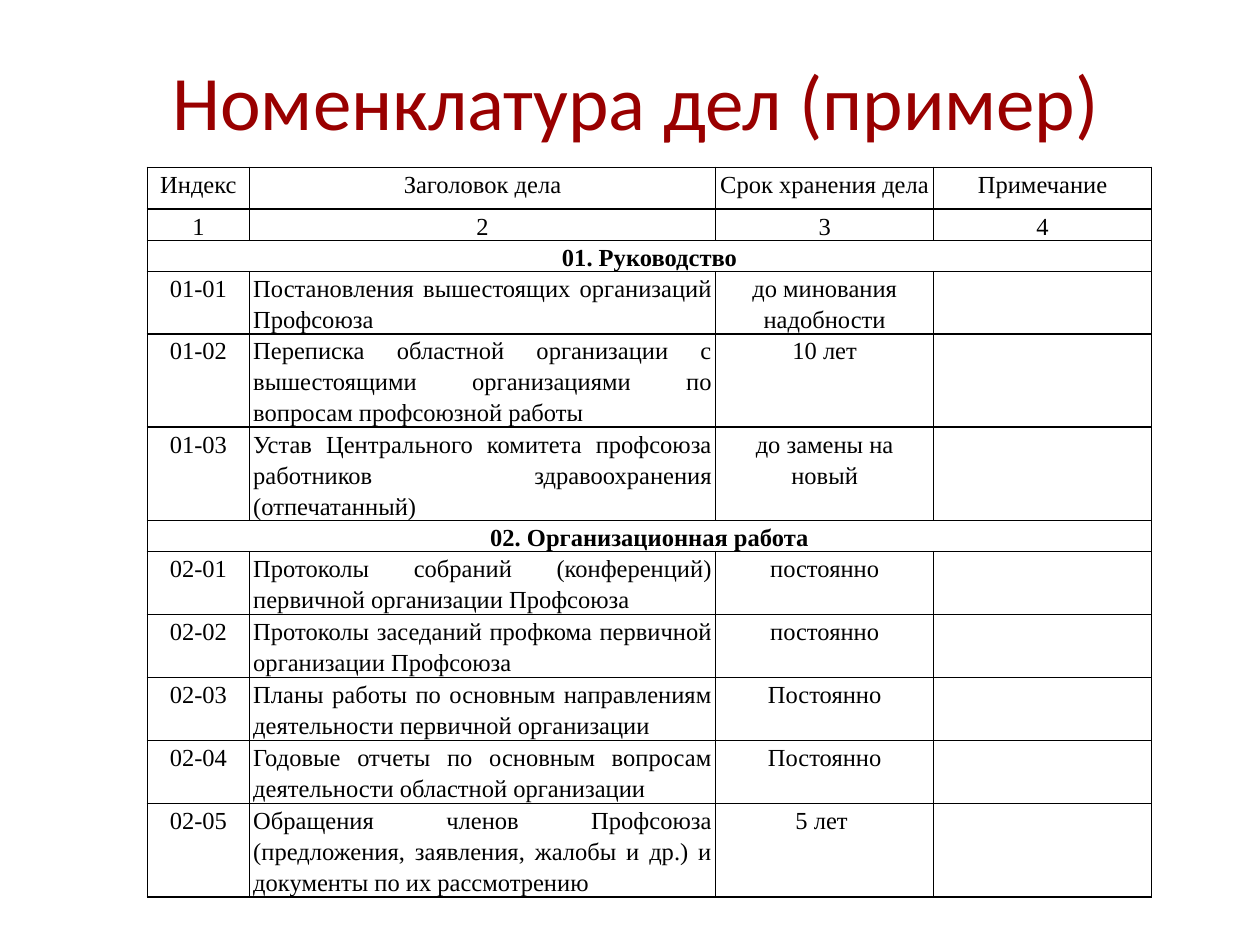
from lxml.etree import SubElement
from pptx import Presentation
from pptx.dml.color import RGBColor
from pptx.enum.text import MSO_ANCHOR, PP_ALIGN
from pptx.oxml.ns import qn
from pptx.util import Inches, Pt

TITLE = "Номенклатура дел (пример)"
COLUMN_WIDTHS = (0.081, 0.37, 0.173, 0.173)  # shares of the slide width
ROW_UNIT = 1 / 45  # share of the slide height

# Minimum height in row units, then the cell texts; one text is a section heading.
ROWS = [
    (2, "Индекс", "Заголовок дела", "Срок хранения дела", "Примечание"),
    (1, "1", "2", "3", "4"),
    (1, "01. Руководство"),
    (2, "01-01", "Постановления вышестоящих организаций Профсоюза",
     "до минования надобности", ""),
    (3, "01-02", "Переписка областной организации с вышестоящими организациями "
     "по вопросам профсоюзной работы", "10 лет", ""),
    (3, "01-03", "Устав Центрального комитета профсоюза работников "
     "здравоохранения (отпечатанный)", "до замены на новый", ""),
    (1, "02. Организационная работа"),
    (3, "02-01", "Протоколы собраний (конференций) первичной организации Профсоюза",
     "постоянно", ""),
    (3, "02-02", "Протоколы заседаний профкома первичной организации Профсоюза",
     "постоянно", ""),
    (3, "02-03", "Планы работы по основным направлениям деятельности "
     "первичной организации", "Постоянно", ""),
    (3, "02-04", "Годовые отчеты по основным вопросам деятельности "
     "областной организации", "Постоянно", ""),
    (4, "02-05", "Обращения членов Профсоюза (предложения, заявления, жалобы и др.) "
     "и документы по их рассмотрению", "5 лет ", ""),
]


def rgb(code):
    return RGBColor.from_string(code)


def apply(target, values):
    for name, value in values.items():
        setattr(target, name, value)


class SlideBuilder:
    """Holds the style and the current slide; lengths are shares of the slide."""

    TITLE_FONT = {"name": "Calibri", "size": Pt(44)}
    TITLE_COLOR = "990000"
    CELL_FONT = {"name": "Times New Roman", "size": Pt(14)}
    INK = "000000"
    CELL_FORMAT = {"margin_left": Inches(0.03), "margin_right": Inches(0.03),
                   "margin_top": 0, "margin_bottom": 0}

    def __init__(self, deck):
        self.width, self.height = deck.slide_width, deck.slide_height
        self.slide = deck.slides.add_slide(deck.slide_layouts[5])

    def box(self, left, top, width, height):
        return {"left": round(left * self.width), "top": round(top * self.height),
                "width": round(width * self.width), "height": round(height * self.height)}

    def fill_text(self, frame, text, align, font, color, spacing=1.0):
        paragraph = frame.paragraphs[0]
        apply(paragraph, {"alignment": align, "line_spacing": spacing})
        if text:
            paragraph.add_run().text = text
        for part in (paragraph, *paragraph.runs):
            apply(part.font, font)
            part.font.color.rgb = rgb(color)

    def title(self, text, *area):
        heading = self.slide.shapes.title
        apply(heading, self.box(*area))
        apply(heading.text_frame, {"vertical_anchor": MSO_ANCHOR.MIDDLE, "word_wrap": True})
        self.fill_text(heading.text_frame, text, PP_ALIGN.CENTER,
                       self.TITLE_FONT, self.TITLE_COLOR)

    def border(self, cell):
        properties = cell._tc.get_or_add_tcPr()
        for side in ("a:lnL", "a:lnR", "a:lnT", "a:lnB"):
            line = SubElement(properties, qn(side), w=str(Pt(1)))
            fill = SubElement(line, qn("a:solidFill"))
            SubElement(fill, qn("a:srgbClr"), val=self.INK)

    def cell(self, cell, text, align, bold=False):
        self.border(cell)
        cell.fill.background()
        apply(cell, self.CELL_FORMAT)
        self.fill_text(cell.text_frame, text, align,
                       {**self.CELL_FONT, "bold": bold}, self.INK, 1.15)

    def register(self, rows, widths, left, top, height):
        """Draw the table of files, with section headings across all columns."""
        area = self.box(left, top, sum(widths), height)
        frame = self.slide.shapes.add_table(len(rows), len(widths), **area)
        table = frame.table
        apply(table, {"first_row": False, "horz_banding": False})
        for column, share in zip(table.columns, widths):
            column.width = round(share * self.width)
        for r, (units, *texts) in enumerate(rows):
            table.rows[r].height = round(units * ROW_UNIT * self.height)
            is_section = len(texts) == 1
            is_file = "-" in texts[0]
            texts += [""] * (len(widths) - len(texts))
            for c, text in enumerate(texts):
                align = PP_ALIGN.JUSTIFY if is_file and c == 1 else PP_ALIGN.CENTER
                self.cell(table.cell(r, c), text, align, is_section)
            if is_section:
                table.cell(r, 0).merge(table.cell(r, len(widths) - 1))
        frame.height = area["height"]


def main():
    deck = Presentation()
    apply(deck, {"slide_width": Inches(10), "slide_height": Inches(7.5)})
    builder = SlideBuilder(deck)
    builder.title(TITLE, 0.08, 0.03, 0.85, 0.15)
    builder.register(ROWS, COLUMN_WIDTHS, 0.117, 0.177, 0.83)
    deck.save("out.pptx")


if __name__ == "__main__":
    main()
